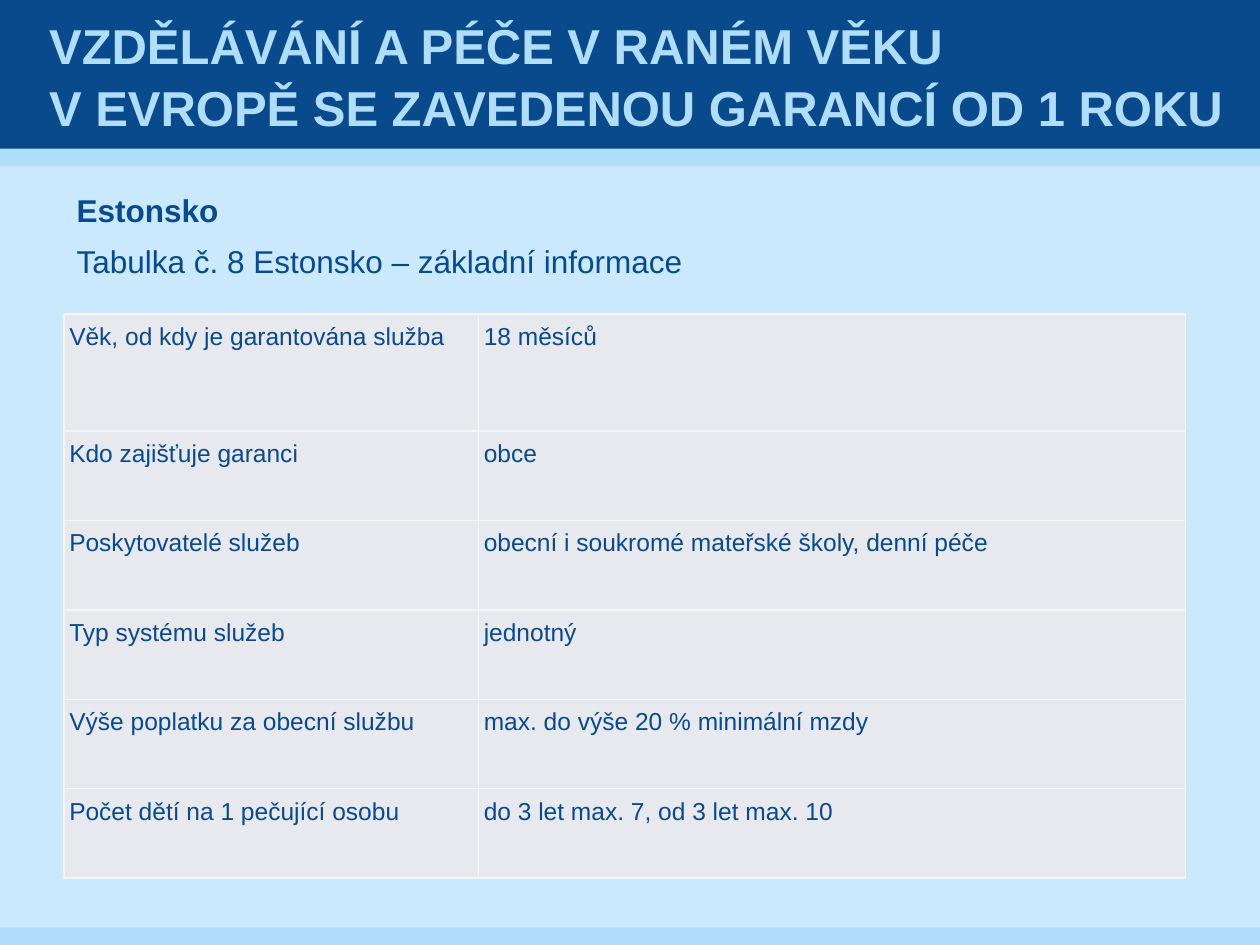
import pptx
import pptx.util
import pptx.oxml
from pptx.dml.color import RGBColor
from pptx.enum.shapes import MSO_SHAPE
from pptx.enum.text import MSO_ANCHOR, MSO_AUTO_SIZE, PP_ALIGN
from pptx.oxml.ns import nsdecls
from pptx.util import Inches, Pt

NAVY = RGBColor(0x08, 0x4A, 0x8B)
SKY = RGBColor(0xAF, 0xDD, 0xFA)
PALE = RGBColor(0xCA, 0xE9, 0xFC)
GREY = RGBColor(0xE7, 0xE9, 0xEE)
EDGE = "F5F5F5"

TITLE = "VZDĚLÁVÁNÍ A PÉČE V RANÉM VĚKU\vV EVROPĚ SE ZAVEDENOU GARANCÍ OD 1 ROKU"
# top, height, colour
BANDS = [(1.18, 0.14, SKY), (0, 1.18, NAVY), (7.36, 0.14, SKY)]
# text, top, width, bold
HEADS = [
    ("Estonsko", 1.47, 4.25, True),
    ("Tabulka č. 8 Estonsko – základní informace", 1.87, 5.84, False),
]
FACTS = [
    ("Věk, od kdy je garantována služba", "18 měsíců"),
    ("Kdo zajišťuje garanci", "obce"),
    ("Poskytovatelé služeb", "obecní i soukromé mateřské školy, denní péče"),
    ("Typ systému služeb", "jednotný"),
    ("Výše poplatku za obecní službu", "max. do výše 20 % minimální mzdy"),
    ("Počet dětí na 1 pečující osobu", "do 3 let max. 7, od 3 let max. 10"),
]
LEFT = 0.51
COLS = [3.29, 5.61]
ROWS = [0.93] + [0.71] * (len(FACTS) - 1)


def write(frame, text, size=18, color=NAVY, bold=False, align=PP_ALIGN.LEFT,
          line=1.0, before=0):
    frame.word_wrap = True
    para = frame.paragraphs[0]
    para.text = text
    para.alignment = align
    para.line_spacing = line
    para.space_before = Pt(before)
    for run in para.runs:
        font = run.font
        font.name, font.size, font.bold = "Arial", Pt(size), bold
        font.color.rgb = color


def edge(cell):
    """Draw a thin line on all four sides; call before the fill is set."""
    props = cell._tc.get_or_add_tcPr()
    for side in ("lnL", "lnR", "lnT", "lnB"):
        props.append(pptx.oxml.parse_xml(
            f'<a:{side} {nsdecls("a")} w="{Pt(1)}"><a:solidFill>'
            f'<a:srgbClr val="{EDGE}"/></a:solidFill></a:{side}>'))


def add_bands(slide, width):
    for top, height, color in BANDS:
        band = slide.shapes.add_shape(
            MSO_SHAPE.RECTANGLE, 0, Inches(top), width, Inches(height))
        band.shadow.inherit = False
        band.fill.solid()
        band.fill.fore_color.rgb = color
        band.line.fill.background()


def add_facts(slide):
    table = slide.shapes.add_table(
        len(ROWS), len(COLS), Inches(LEFT), Inches(2.49),
        Inches(sum(COLS)), Inches(sum(ROWS))).table
    table.first_row = table.horz_banding = False
    for col, width in zip(table.columns, COLS):
        col.width = Inches(width)
    for row, height, texts in zip(table.rows, ROWS, FACTS):
        row.height = Inches(height)
        for cell, text in zip(row.cells, texts):
            cell.margin_left = cell.margin_right = Inches(0.04)
            cell.margin_top = cell.margin_bottom = Inches(0.04)
            edge(cell)
            cell.fill.solid()
            cell.fill.fore_color.rgb = GREY
            write(cell.text_frame, text, size=14, align=PP_ALIGN.JUSTIFY,
                  line=1.15, before=6)


def add_heads(slide):
    for text, top, width, bold in HEADS:
        box = slide.shapes.add_textbox(
            Inches(LEFT), Inches(top), Inches(width), Inches(0.4))
        write(box.text_frame, text, bold=bold)
        box.text_frame.auto_size = MSO_AUTO_SIZE.SHAPE_TO_FIT_TEXT


def set_title(slide):
    title = slide.shapes.title
    title.left, title.top = Inches(0.35), 0
    title.width, title.height = Inches(9.45), Inches(1.18)
    frame = title.text_frame
    frame.margin_left = frame.margin_right = Inches(0.04)
    frame.margin_top = frame.margin_bottom = 0
    frame.vertical_anchor = MSO_ANCHOR.MIDDLE
    frame.auto_size = MSO_AUTO_SIZE.NONE
    write(frame, TITLE, size=28, color=SKY, bold=True, line=1.05)
    slide.shapes.element.append(title.element)  # in front of the bands


def main():
    deck = pptx.Presentation()
    deck.slide_width, deck.slide_height = Inches(10), Inches(7.5)
    slide = deck.slides.add_slide(deck.slide_layouts[5])
    slide.background.fill.solid()
    slide.background.fill.fore_color.rgb = PALE
    add_bands(slide, deck.slide_width)
    add_facts(slide)
    add_heads(slide)
    set_title(slide)
    deck.save("out.pptx")


if __name__ == "__main__":
    main()
